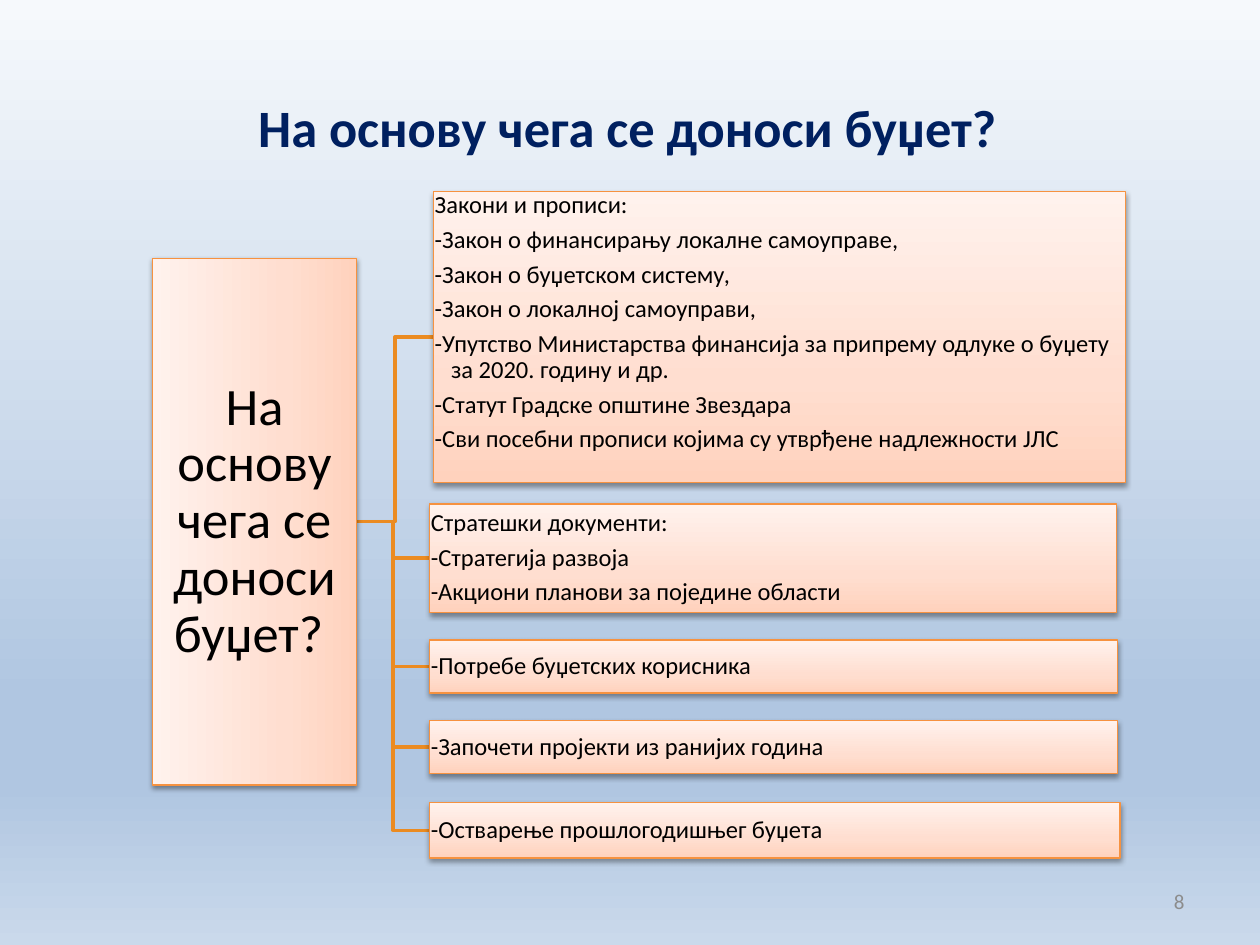
from dataclasses import dataclass

from lxml import etree
from pptx import Presentation
from pptx import util as u
from pptx.dml.color import RGBColor
from pptx.enum import shapes, text
from pptx.oxml import ns

COLUMNS, ROWS = 100, 75
SLIDE_WIDTH, SLIDE_HEIGHT = u.Inches(10), u.Inches(7.5)
FONT = "Calibri"
SKY = [(0, "F6F9FC"), (74, "B0C6E1"), (83, "B0C6E1"), (100, "CAD9EB")]
PEACH = [(0, "FFD2BD"), (35, "FFDED0"), (100, "FFF2ED")]
DOWN, LEFT, UP = 90, 180, 270

QUESTION = "На основу чега се доноси буџет?"


@dataclass
class Box:
    """A rectangle in columns and rows of the slide grid."""
    left: float
    top: float
    width: float
    height: float

    @property
    def right(self):
        return self.left + self.width

    @property
    def middle(self):
        return self.top + self.height / 2

    def lengths(self):
        return (across(self.left), down(self.top),
                across(self.width), down(self.height))


BRANCHES = [
    (Box(34.4, 15.2, 54.9, 23.1), text.MSO_ANCHOR.TOP, [
        "Закони и прописи:",
        "-Закон о финансирању локалне самоуправе,",
        "-Закон о буџетском систему,",
        "-Закон о локалној самоуправи,",
        "-Упутство Министарства финансија за припрему одлуке о буџету "
        "за 2020. годину и др.",
        "-Статут Градске општине Звездара",
        "-Сви посебни прописи којима су утврђене надлежности ЈЛС"]),
    (Box(34.1, 40, 54.5, 8.6), text.MSO_ANCHOR.MIDDLE, [
        "Стратешки документи:",
        "-Стратегија развоја",
        "-Акциони планови за поједине области"]),
    (Box(34.1, 50.8, 54.6, 4.2), text.MSO_ANCHOR.MIDDLE,
     ["-Потребе буџетских корисника"]),
    (Box(34.1, 57.2, 54.6, 4.2), text.MSO_ANCHOR.MIDDLE,
     ["-Започети пројекти из ранијих година"]),
    (Box(34.1, 63.7, 54.8, 4.4), text.MSO_ANCHOR.MIDDLE,
     ["-Остварење прошлогодишњег буџета"]),
]


def across(columns):
    return round(SLIDE_WIDTH * columns / COLUMNS)


def down(rows):
    return round(SLIDE_HEIGHT * rows / ROWS)


def colour(value):
    return RGBColor.from_string(value)


def add_element(parent, tag, **attributes):
    values = {name: str(value) for name, value in attributes.items()}
    return etree.SubElement(parent, ns.qn(tag), values)


def set_gradient(fill, owner, stops, angle):
    """Give the owner element a linear gradient; angle runs clockwise."""
    fill.solid()
    solid = owner.find(ns.qn("a:solidFill"))
    gradient = etree.Element(ns.qn("a:gradFill"), rotWithShape="1")
    stop_list = add_element(gradient, "a:gsLst")
    for position, value in stops:
        stop = add_element(stop_list, "a:gs", pos=position * 1000)
        add_element(stop, "a:srgbClr", val=value)
    add_element(gradient, "a:lin", ang=angle * 60000, scaled=0)
    owner.replace(solid, gradient)


def add_shadow(shape):
    shape.shadow.inherit = False
    effects = shape._element.spPr.find(ns.qn("a:effectLst"))
    shadow = add_element(effects, "a:outerShdw", blurRad=u.Pt(3.1),
                         dist=u.Pt(1.6), dir=DOWN * 60000, rotWithShape=0)
    shade = add_element(shadow, "a:srgbClr", val="000000")
    add_element(shade, "a:alpha", val=38000)


def set_frame(frame, anchor, margin):
    frame.word_wrap = True
    frame.vertical_anchor = anchor
    frame.margin_left = frame.margin_right = u.Inches(margin)
    frame.margin_top = frame.margin_bottom = u.Inches(margin)


def write(paragraph, words, size, value, alignment, bold=False):
    paragraph.alignment = alignment
    run = paragraph.add_run()
    run.text = words
    run.font.name, run.font.size, run.font.bold = FONT, u.Pt(size), bold
    run.font.color.rgb = colour(value)


def add_title(slide, box):
    title = slide.shapes.title
    title.left, title.top, title.width, title.height = box.lengths()
    title.text_frame.vertical_anchor = text.MSO_ANCHOR.MIDDLE
    write(title.text_frame.paragraphs[0], QUESTION, 30, "002060",
          text.PP_ALIGN.CENTER, bold=True)


def add_page_number(slide, box):
    frame = slide.shapes.add_textbox(*box.lengths()).text_frame
    set_frame(frame, text.MSO_ANCHOR.MIDDLE, 0.1)
    write(frame.paragraphs[0], "8", 12, "8C8C8C", text.PP_ALIGN.RIGHT)


def add_elbow(slide, root, branch):
    """Draw a stepped line from the root's right side to the branch."""
    turn = (root.right + branch.left) / 2
    builder = slide.shapes.build_freeform(across(root.right), down(root.middle))
    corners = [(turn, root.middle), (turn, branch.middle),
               (branch.left, branch.middle)]
    builder.add_line_segments([(across(x), down(y)) for x, y in corners],
                              close=False)
    elbow = builder.convert_to_shape()
    elbow.shadow.inherit = False
    elbow.fill.background()
    elbow.line.color.rgb = colour("EB8B21")
    elbow.line.width = u.Pt(2)


def add_panel(slide, box, angle):
    panel = slide.shapes.add_shape(shapes.MSO_SHAPE.RECTANGLE, *box.lengths())
    set_gradient(panel.fill, panel._element.spPr, PEACH, angle)
    panel.line.color.rgb = colour("F69240")
    panel.line.width = u.Pt(0.75)
    add_shadow(panel)
    return panel.text_frame


def add_root(slide, box):
    frame = add_panel(slide, box, LEFT)
    set_frame(frame, text.MSO_ANCHOR.MIDDLE, 0.02)
    paragraph = frame.paragraphs[0]
    paragraph.line_spacing = 0.9
    write(paragraph, QUESTION + " ", 30, "000000", text.PP_ALIGN.CENTER)


def add_branch(slide, box, anchor, lines):
    frame = add_panel(slide, box, UP)
    set_frame(frame, anchor, 0.01)
    for index, line in enumerate(lines):
        paragraph = frame.add_paragraph() if index else frame.paragraphs[0]
        paragraph.line_spacing = 0.9
        paragraph.space_after = u.Pt(4.6)
        hanging = u.Inches(0.13)
        properties = paragraph._p.get_or_add_pPr()
        properties.set("marL", str(hanging))
        properties.set("indent", str(-hanging))
        write(paragraph, line, 14, "000000", text.PP_ALIGN.LEFT)


def add_tree(slide, root):
    for box, _, _ in reversed(BRANCHES):
        add_elbow(slide, root, box)
    add_root(slide, root)
    for box, anchor, lines in BRANCHES:
        add_branch(slide, box, anchor, lines)


def main():
    presentation = Presentation()
    presentation.slide_width = SLIDE_WIDTH
    presentation.slide_height = SLIDE_HEIGHT
    slide = presentation.slides.add_slide(presentation.slide_layouts[5])
    backdrop = slide.background.fill
    backdrop.solid()
    set_gradient(backdrop, next(slide.element.iter(ns.qn("p:bgPr"))), SKY, DOWN)
    add_title(slide, Box(4.8, 5.4, 90, 9.3))
    add_page_number(slide, Box(71.7, 69.5, 23.3, 4))
    add_tree(slide, Box(12.1, 20.5, 16.2, 41.8))
    presentation.save("out.pptx")


if __name__ == "__main__":
    main()
